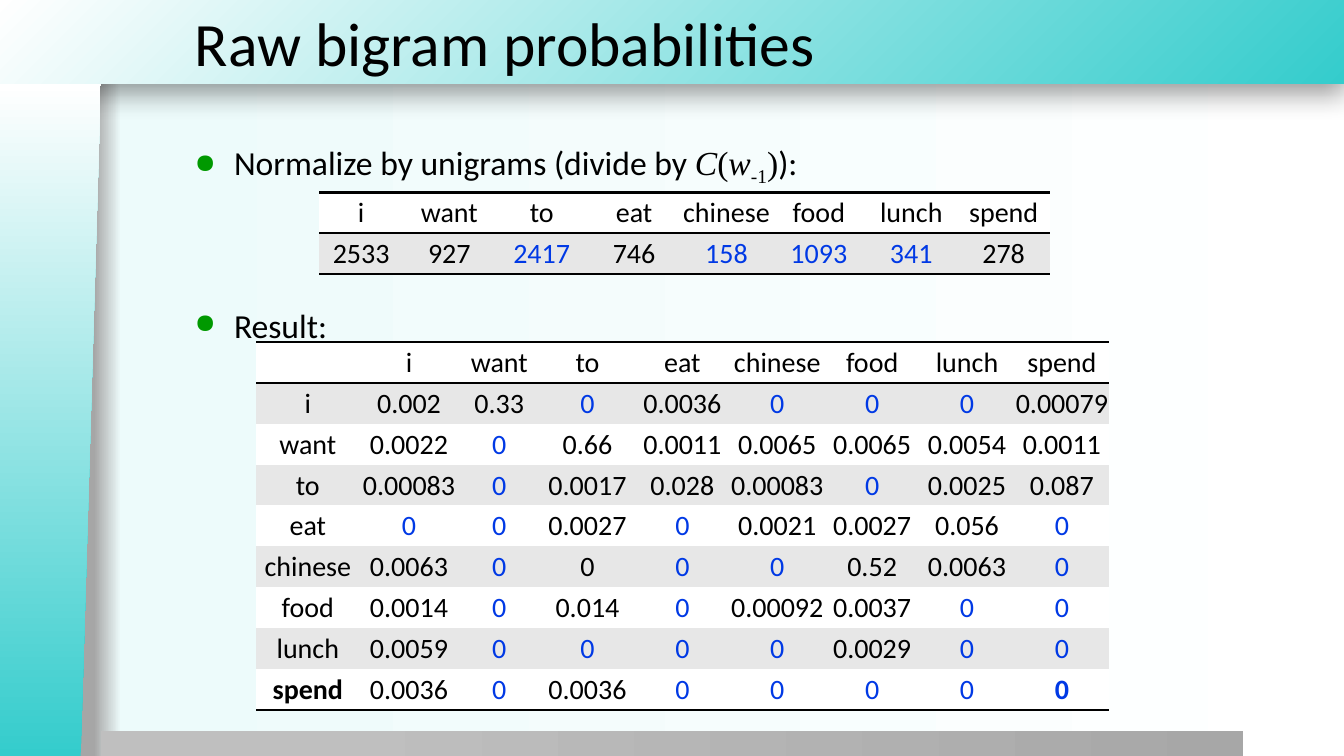
from lxml import etree
from pptx import Presentation
from pptx.dml.color import RGBColor
from pptx.enum.shapes import MSO_SHAPE
from pptx.enum.text import MSO_ANCHOR, PP_ALIGN
from pptx.oxml.ns import qn
from pptx.util import Inches, Pt

RECTANGLE = MSO_SHAPE.RECTANGLE
MANUAL_INPUT = MSO_SHAPE.FLOWCHART_MANUAL_INPUT
MIDDLE = MSO_ANCHOR.MIDDLE
TOP = MSO_ANCHOR.TOP
CENTER = PP_ALIGN.CENTER

UNIT = Inches(1) // 12
COLUMNS, ROWS = 160, 90
ROW_HEIGHT = 4.87
NO_STYLE = "{2D5ABB26-0587-4C30-8999-92F81FD0307C}"
COLORS = {
    "teal": "34CCCC", "white": "FFFFFF", "black": "000000", "blue": "0039E5",
    "band": "E7E7E7", "bullet": "009900", "edge": "A6A6A6", "mist": "EDFBFB",
    "silver": "BFBFBF", "gray": "A7A7A7",
}
SANS = {"name": "Calibri", "italic": False}
SERIF = {"name": "Times New Roman", "italic": False}
SERIF_ITALIC = {"name": "Times New Roman", "italic": True}

WORDS = "i want to eat chinese food lunch spend".split()
UNIGRAM_COUNTS = "2533 927 2417 746 158 1093 341 278".split()
BLUE_COUNTS = {(1, WORDS.index(word)) for word in ("to", "chinese", "food", "lunch")}
PROBABILITIES = [line.split() for line in (
    "0.002 0.33 0 0.0036 0 0 0 0.00079",
    "0.0022 0 0.66 0.0011 0.0065 0.0065 0.0054 0.0011",
    "0.00083 0 0.0017 0.028 0.00083 0 0.0025 0.087",
    "0 0 0.0027 0 0.0021 0.0027 0.056 0",
    "0.0063 0 0 0 0 0.52 0.0063 0",
    "0.0014 0 0.014 0 0.00092 0.0037 0 0",
    "0.0059 0 0 0 0 0.0029 0 0",
    "0.0036 0 0.0036 0 0 0 0 0",
)]
BLACK_ZERO = (WORDS.index("chinese") + 1, WORDS.index("to") + 1)
BOLD_CELLS = {(8, 0), (8, 8)}


def units(*lengths):
    return [round(length * UNIT) for length in lengths]


def set_attributes(target, values):
    for name, value in values.items():
        setattr(target, name, value)


def add_child(parent, tag, **attributes):
    child = etree.SubElement(parent, qn(tag))
    for name, value in attributes.items():
        child.set(name, str(value))
    return child


def add_color(parent, color):
    return add_child(parent, "a:srgbClr", val=COLORS[color])


def set_gradient(fill, owner, stops, radial=False):
    fill.gradient()
    gradient = next(owner.iter(qn("a:gradFill")))
    for child in list(gradient):
        gradient.remove(child)
    gradient.set("rotWithShape", "1")
    stop_list = add_child(gradient, "a:gsLst")
    for position, color in stops:
        add_color(add_child(stop_list, "a:gs", pos=position * 1000), color)
    if radial:
        circle = add_child(gradient, "a:path", path="circle")
        add_child(circle, "a:fillToRect", l=100000, t=100000)
    else:
        add_child(gradient, "a:lin", ang=0, scaled=0)


def add_panel(slide, kind, box, stops, radial=False):
    shape = slide.shapes.add_shape(kind, *units(*box))
    set_gradient(shape.fill, shape._element.spPr, stops, radial)
    shape.line.fill.background()
    shape.shadow.inherit = False
    return shape


def add_drop_shadow(shape):
    effects = shape._element.spPr.find(qn("a:effectLst"))
    shadow = add_child(effects, "a:outerShdw", blurRad=Pt(20), dist=Pt(6),
                       dir=90 * 60000, algn="t", rotWithShape=0)
    add_child(add_color(shadow, "black"), "a:alpha", val=40000)


def add_run(paragraph, text, size, color="black", **font):
    run = paragraph.add_run()
    run.text = text
    set_attributes(run.font, {"size": Pt(size), **SANS, **font})
    run.font.color.rgb = RGBColor.from_string(COLORS[color])
    return run


def add_text_box(slide, box, anchor):
    frame = slide.shapes.add_textbox(*units(*box)).text_frame
    set_attributes(frame, {"word_wrap": True, "vertical_anchor": anchor})
    return frame


def add_bullet(paragraph):
    properties = paragraph._p.get_or_add_pPr()
    properties.set("marL", str(Inches(0.39)))
    properties.set("indent", str(-Inches(0.39)))
    add_color(add_child(properties, "a:buClr"), "bullet")
    add_child(properties, "a:buSzPct", val=80000)
    add_child(properties, "a:buChar", char="●")


def add_border(cell, side):
    line = add_child(cell._tc.get_or_add_tcPr(), side, w=Pt(2))
    add_color(add_child(line, "a:solidFill"), "black")


def fill_cell(cell, text, row, last_row, color, bold):
    set_attributes(cell, {
        "margin_left": Inches(0.01), "margin_right": Inches(0.01),
        "margin_top": Inches(0.01), "margin_bottom": 0,
        "vertical_anchor": MIDDLE,
    })
    if row == 0:
        add_border(cell, "a:lnT")
    if row in (0, last_row):
        add_border(cell, "a:lnB")
    cell.fill.solid()
    cell.fill.fore_color.rgb = RGBColor.from_string(COLORS["band" if row % 2 else "white"])
    paragraph = cell.text_frame.paragraphs[0]
    paragraph.alignment = CENTER
    if text:
        add_run(paragraph, text, 20, color, bold=bold)


def add_word_table(slide, left, top, widths, rows, blue_cells, bold_cells=()):
    box = units(left, top, sum(widths), ROW_HEIGHT * len(rows))
    table = slide.shapes.add_table(len(rows), len(widths), *box).table
    set_attributes(table, {"first_row": False, "horz_banding": False})
    table._tbl.tblPr.find(qn("a:tableStyleId")).text = NO_STYLE
    for column, width in zip(table.columns, units(*widths)):
        column.width = width
    for row, texts in enumerate(rows):
        table.rows[row].height = units(ROW_HEIGHT)[0]
        for column, text in enumerate(texts):
            color = "blue" if (row, column) in blue_cells else "black"
            fill_cell(table.cell(row, column), text, row, len(rows) - 1,
                      color, (row, column) in bold_cells)


def add_frame(slide):
    set_gradient(slide.background.fill, slide._element,
                 [(7, "edge"), (9, "mist"), (100, "white")])
    teal_to_white = [(0, "teal"), (100, "white")]
    header = add_panel(slide, RECTANGLE, (0, 0, COLUMNS, 10), teal_to_white, radial=True)
    add_drop_shadow(header)
    add_panel(slide, RECTANGLE, (12, 87, 136, 3), [(20, "silver"), (100, "gray")])
    side = add_panel(slide, MANUAL_INPUT, (-34, 44, 80, 12), teal_to_white)
    side.rotation = 270
    side._element.spPr.xfrm.set("flipV", "1")


def add_body(slide):
    frame = add_text_box(slide, (22, 16.3, 126, 24.4), TOP)
    normalize = frame.paragraphs[0]
    add_bullet(normalize)
    for text, font in (("Normalize by unigrams (divide by ", SANS), ("C", SERIF_ITALIC),
                       ("(", SERIF), ("w", SERIF_ITALIC), ("-1", SERIF),
                       (")", SERIF), ("):", SANS)):
        run = add_run(normalize, text, 24, **font)
        if text == "-1":
            run.font._element.set("baseline", "-25000")
    result = frame.add_paragraph()
    result.space_before = Pt(84)
    add_bullet(result)
    add_run(result, "Result:", 24)


def main():
    presentation = Presentation()
    set_attributes(presentation, {"slide_width": COLUMNS * UNIT, "slide_height": ROWS * UNIT})
    slide = presentation.slides.add_slide(presentation.slide_layouts[6])
    add_frame(slide)
    title = add_text_box(slide, (22, 0, 138, 10), MIDDLE)
    add_run(title.paragraphs[0], "Raw bigram probabilities", 44)
    add_body(slide)
    add_word_table(slide, 38, 22.9, [10] + [11] * 7, [WORDS, UNIGRAM_COUNTS], BLUE_COUNTS)
    rows = [["", *WORDS]] + [[word, *values] for word, values in zip(WORDS, PROBABILITIES)]
    zeros = {(row, column) for row, texts in enumerate(rows)
             for column, text in enumerate(texts) if text == "0"}
    add_word_table(slide, 30.5, 40.7, [12.3, 11.8, 9.7] + [11.3] * 6, rows,
                   zeros - {BLACK_ZERO}, BOLD_CELLS)
    presentation.save("out.pptx")


if __name__ == "__main__":
    main()
